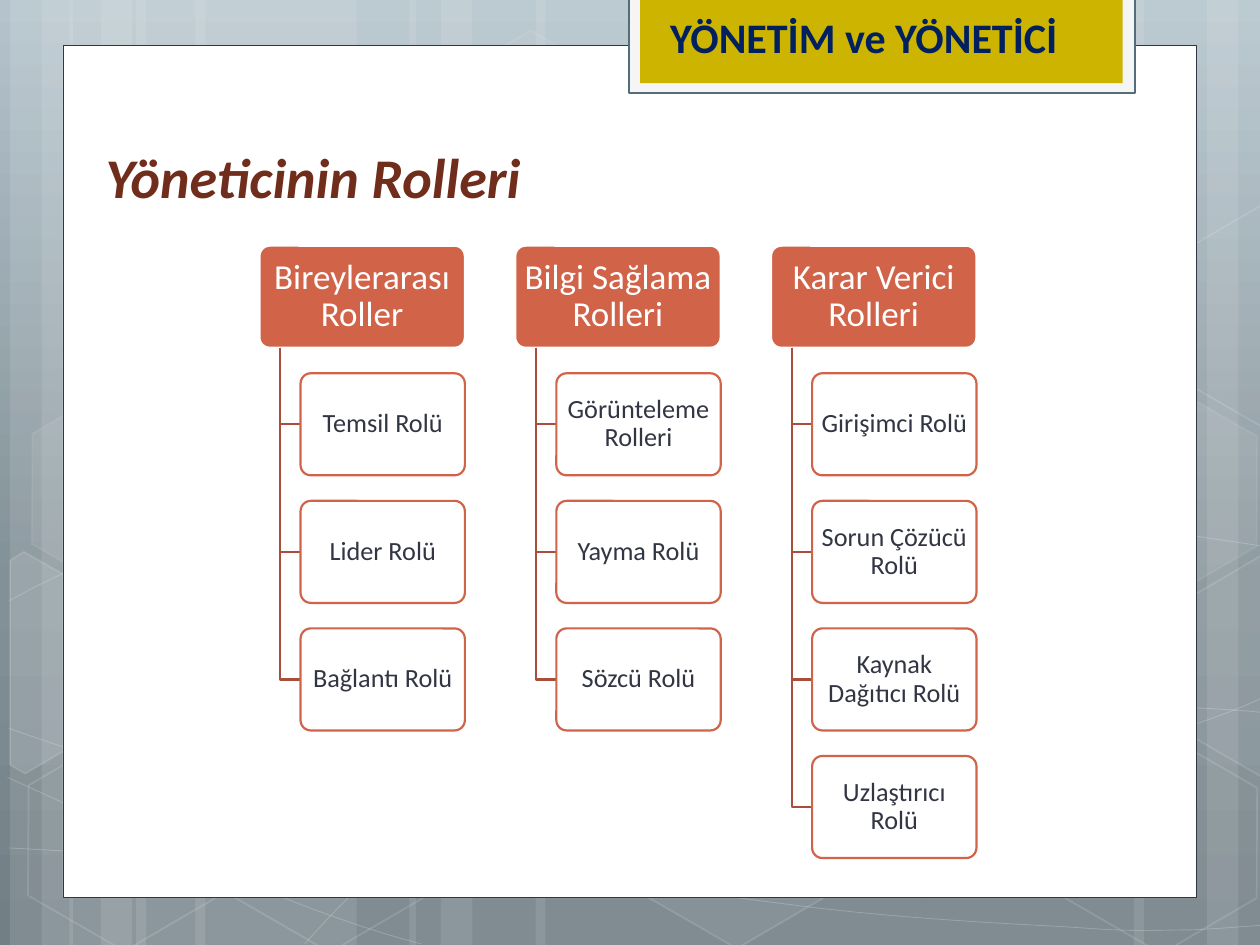
from copy import deepcopy
from dataclasses import dataclass
from typing import NamedTuple, Optional

from lxml import etree
from pptx import Presentation
from pptx.dml.color import RGBColor
from pptx.enum.shapes import MSO_SHAPE
from pptx.enum.text import MSO_ANCHOR, PP_ALIGN
from pptx.oxml.ns import qn
from pptx.util import Inches, Pt

RECT = MSO_SHAPE.RECTANGLE
ROUNDED = MSO_SHAPE.ROUNDED_RECTANGLE
HEXAGON = MSO_SHAPE.HEXAGON
CENTER = PP_ALIGN.CENTER
LEFT = PP_ALIGN.LEFT
TOP, MIDDLE, BOTTOM = MSO_ANCHOR.TOP, MSO_ANCHOR.MIDDLE, MSO_ANCHOR.BOTTOM


@dataclass(frozen=True)
class Theme:
    font: str = "Calibri"
    white: str = "FFFFFF"
    ink: str = "323543"
    frame: str = "F5F5F5"
    frame_line: str = "546D7A"
    banner: str = "CCB400"
    banner_text: str = "002060"
    title: str = "712D1C"
    accent: str = "D16349"
    branch: str = "A74F3A"
    backdrop: tuple = ((0, "B5C4CC"), (0.62, "829097"), (1, "727F86"))
    banner_size: int = 24
    title_size: int = 32
    head_size: int = 20
    card_size: int = 15


class Paint(NamedTuple):
    color: str
    alpha: Optional[int] = None
    width: float = 1.25


class Box(NamedTuple):
    x: float
    y: float
    w: float
    h: float


class Column(NamedTuple):
    head: str
    roles: tuple


class Hexagon(NamedTuple):
    x: float
    y: float
    fill_alpha: Optional[int]
    line_alpha: int


class CutHexagon(NamedTuple):
    points: tuple
    fill_alpha: Optional[int]


THEME = Theme()

COLUMNS = (
    Column("Bireylerarası Roller", ("Temsil Rolü", "Lider Rolü", "Bağlantı Rolü")),
    Column("Bilgi Sağlama Rolleri", ("Görünteleme Rolleri", "Yayma Rolü", "Sözcü Rolü")),
    Column("Karar Verici Rolleri", ("Girişimci Rolü", "Sorun Çözücü Rolü",
                                    "Kaynak Dağıtıcı Rolü", "Uzlaştırıcı Rolü")),
)

# Left edge and width of each full-height stripe
STRIPES = ((1.08, 1.75), (0.08, 0.5), (0.33, 0.83), (1.55, 1.75), (0.55, 0.5), (0.8, 0.83),
           (7.33, 1.75), (9.58, 0.5), (9, 0.83), (4.25, 3.08), (3.25, 0.5), (3.5, 0.83))

# Start point, then two control points and an end point per Bezier segment
CURVES = (
    ((0.07, 6.73), (0.61, 6.76), (1.15, 6.79), (1.9, 6.78), (2.65, 6.77), (3.58, 6.75),
     (4.58, 6.65), (5.58, 6.55), (7, 6.36), (7.92, 6.17), (8.83, 5.98), (9.77, 5.68),
     (10.07, 5.51)),
    ((0.07, 4.77), (0.36, 4.61), (0.65, 4.46), (1.21, 4.31), (1.78, 4.16), (2.59, 3.94),
     (3.47, 3.87), (4.36, 3.8), (5.44, 3.79), (6.54, 3.87), (7.64, 3.95), (9.47, 4.26),
     (10.07, 4.34)),
    ((0.06, 6.17), (1.27, 6.72), (2.47, 7.27), (3.34, 7.49)),
    ((0.07, 5.78), (0.38, 5.89), (0.7, 6), (1.28, 6.16), (1.86, 6.31), (2.73, 6.56),
     (3.57, 6.73), (4.4, 6.9), (5.45, 7.08), (6.28, 7.18), (7.11, 7.29), (8, 7.33),
     (8.53, 7.36), (9.05, 7.4), (9.19, 7.38), (9.45, 7.38), (9.71, 7.37), (9.89, 7.35),
     (10.07, 7.34)),
    ((2.42, 7.49), (2.6, 7.29), (2.78, 7.09), (3.02, 6.91), (3.26, 6.73), (3.6, 6.53),
     (3.88, 6.39), (4.16, 6.25), (4.33, 6.19), (4.7, 6.09), (5.06, 5.99), (5.73, 5.85),
     (6.08, 5.78), (6.44, 5.71), (6.49, 5.71), (6.8, 5.69), (7.11, 5.66), (7.6, 5.63),
     (7.94, 5.62), (8.29, 5.61), (8.86, 5.62), (8.86, 5.62), (9.08, 5.62), (9.31, 5.62),
     (9.53, 5.62), (9.71, 5.63), (9.88, 5.64), (9.97, 5.65), (10.06, 5.66), (10.03, 5.65),
     (10.06, 5.66)),
)

HEXAGONS = (
    Hexagon(3.34, 0.36, 4, 8), Hexagon(4.97, 5.89, 6, 12), Hexagon(0.11, 5.91, None, 12),
    Hexagon(0.14, 3.12, 7, 8), Hexagon(1.74, 5.92, None, 12), Hexagon(7.53, 4.53, 10, 12),
    Hexagon(8.34, 5.93, None, 12), Hexagon(8.34, 3.14, 7, 8),
)

CUT_HEXAGONS = (
    CutHexagon(((0.08, 4.45), (0.19, 4.38), (0.96, 4.82), (0.95, 5.7), (0.2, 6.14),
                (0.08, 6.07)), 10),
    CutHexagon(((9.26, 4.85), (10.01, 4.41), (10.09, 4.46), (10.09, 6.13), (10.02, 6.17),
                (9.26, 5.73)), 4),
    CutHexagon(((9.26, 2.07), (10.01, 1.63), (10.1, 1.68), (10.09, 3.35), (10.02, 3.39),
                (9.26, 2.95)), None),
)


def set_alpha(parent, percent: Optional[int]) -> None:
    """Make the solid fill directly under parent partly transparent."""
    if percent is not None:
        color = parent.find(qn("a:solidFill"))[0]
        etree.SubElement(color, qn("a:alpha")).set("val", str(percent * 1000))


def style(sp, fill: Optional[Paint] = None, line: Optional[Paint] = None) -> None:
    sp.shadow.inherit = False
    if fill:
        sp.fill.solid()
        sp.fill.fore_color.rgb = RGBColor.from_string(fill.color)
        set_alpha(sp.element.spPr, fill.alpha)
    else:
        sp.fill.background()
    if line:
        sp.line.color.rgb = RGBColor.from_string(line.color)
        sp.line.width = Pt(line.width)
        set_alpha(sp.element.spPr.find(qn("a:ln")), line.alpha)
    else:
        sp.line.fill.background()


def add_box(shapes, kind, box: Box, fill=None, line=None):
    sp = shapes.add_shape(kind, *map(Inches, box))
    style(sp, fill, line)
    return sp


def add_outline(shapes, points, line: Paint, fill=None, close=False):
    start, *rest = [(Inches(x), Inches(y)) for x, y in points]
    builder = shapes.build_freeform(*start)
    builder.add_line_segments(rest, close=close)
    sp = builder.convert_to_shape()
    style(sp, fill, line)
    return sp


def add_curve(shapes, points, line: Paint) -> None:
    """Draw a polyline, then turn each three of its segments into one Bezier."""
    path = add_outline(shapes, points, line).element.find(".//" + qn("a:path"))
    segments = path.findall(qn("a:lnTo"))
    for i in range(0, len(segments), 3):
        bezier = etree.SubElement(path, qn("a:cubicBezTo"))
        for segment in segments[i:i + 3]:
            bezier.append(segment[0])
            path.remove(segment)


def write(sp, text: str, size: int, color: str, *, bold=False, italic=False,
          align=LEFT, anchor=TOP, insets=(0.1, 0.05), spacing=1.0) -> None:
    tf = sp.text_frame
    tf.word_wrap = True
    tf.vertical_anchor = anchor
    tf.margin_left = tf.margin_right = Inches(insets[0])
    tf.margin_top = tf.margin_bottom = Inches(insets[1])
    p = tf.paragraphs[0]
    p.alignment = align
    p.line_spacing = spacing
    r = p.add_run()
    r.text = text
    r.font.name, r.font.size = THEME.font, Pt(size)
    r.font.bold, r.font.italic = bold, italic
    r.font.color.rgb = RGBColor.from_string(color)


def draw_backdrop(s) -> None:
    fill = s.background.fill
    fill.gradient()
    fill.gradient_angle = 270
    stops = s.element.find(".//" + qn("a:gsLst"))
    stops.append(deepcopy(stops[-1]))
    for stop, (position, color) in zip(fill.gradient_stops, THEME.backdrop):
        stop.position = position
        stop.color.rgb = RGBColor.from_string(color)

    shapes = s.shapes.add_group_shape().shapes
    for x, width in STRIPES:
        add_box(shapes, RECT, Box(x, 0, width, 7.5), Paint(THEME.white, 10))
    for points in CURVES:
        add_curve(shapes, points, Paint(THEME.white, 20, 0.5))
    for item in HEXAGONS:
        fill = Paint(THEME.white, item.fill_alpha) if item.fill_alpha else None
        sp = add_box(shapes, HEXAGON, Box(item.x, item.y, 1.75, 1.52), fill,
                     Paint(THEME.white, item.line_alpha, 1))
        sp.adjustments[0] = 0.285
        sp.rotation = 30
    for item in CUT_HEXAGONS:
        fill = Paint(THEME.white, item.fill_alpha) if item.fill_alpha else None
        add_outline(shapes, item.points, Paint(THEME.white, 12, 1), fill, close=True)


def draw_page(s) -> None:
    add_box(s.shapes, RECT, Box(0.5, 0.36, 9, 6.76), Paint(THEME.white), Paint(THEME.ink, width=0.5))
    add_box(s.shapes, RECT, Box(4.99, -0.02, 4.02, 0.76), Paint(THEME.frame), Paint(THEME.frame_line))
    add_box(s.shapes, RECT, Box(5.08, -0.02, 3.83, 0.68), Paint(THEME.banner))
    banner = s.shapes.add_textbox(*map(Inches, Box(5.22, 0.04, 3.49, 1.01)))
    write(banner, "YÖNETİM ve YÖNETİCİ", THEME.banner_size, THEME.banner_text, bold=True)
    title = s.shapes.add_textbox(*map(Inches, Box(0.74, 0.92, 8.95, 0.79)))
    write(title, "Yöneticinin Rolleri", THEME.title_size, THEME.title,
          bold=True, italic=True, anchor=BOTTOM)


def draw_roles(s) -> None:
    shapes = s.shapes.add_group_shape().shapes
    top, width, height = 1.95, 1.63, 0.81
    row_pitch = 1.25 * height
    for i, column in enumerate(COLUMNS):
        left = 2.06 + 2.03 * i
        head = add_box(shapes, ROUNDED, Box(left, top, width, height),
                       Paint(THEME.accent), Paint(THEME.white))
        head.adjustments[0] = 0.1
        write(head, column.head, THEME.head_size, THEME.white, align=CENTER,
              anchor=MIDDLE, insets=(0.04, 0.03), spacing=0.9)
        trunk, card_left = left + 0.1 * width, left + 0.2 * width
        for row, role in enumerate(column.roles, 1):
            card_top = top + row * row_pitch
            middle = card_top + height / 2
            add_outline(shapes, ((trunk, top + height), (trunk, middle), (card_left, middle)),
                        Paint(THEME.branch))
            card = add_box(shapes, ROUNDED, Box(card_left, card_top, 0.8 * width, height),
                           Paint(THEME.white, 90), Paint(THEME.accent))
            card.adjustments[0] = 0.1
            write(card, role, THEME.card_size, THEME.ink, align=CENTER,
                  anchor=MIDDLE, insets=(0.03, 0.02), spacing=0.9)


def main() -> None:
    prs = Presentation()
    prs.slide_width, prs.slide_height = Inches(10), Inches(7.5)
    s = prs.slides.add_slide(prs.slide_layouts[6])
    draw_backdrop(s)
    draw_page(s)
    draw_roles(s)
    prs.save("out.pptx")


if __name__ == "__main__":
    main()
